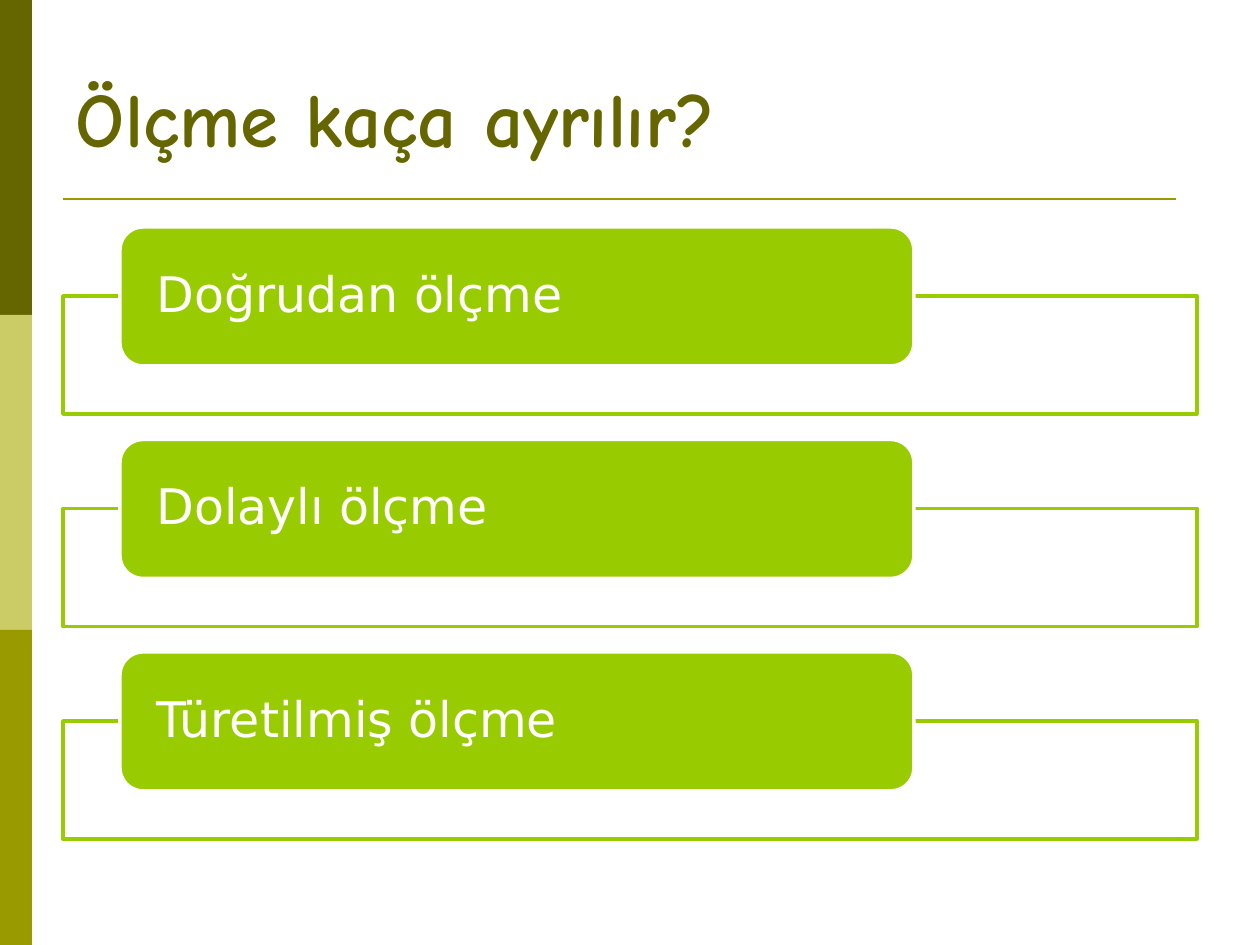
from pptx import Presentation
from pptx.dml.color import RGBColor
from pptx.enum.shapes import MSO_CONNECTOR, MSO_SHAPE as SHAPE
from pptx.enum.text import MSO_ANCHOR, PP_ALIGN
from pptx.oxml.ns import qn
from pptx.util import Pt
from lxml.etree import SubElement

TITLE = "Ölçme kaça ayrılır?"
KINDS = ["Doğrudan ölçme", "Dolaylı ölçme", "Türetilmiş ölçme"]
COLORS = {"dark": "666600", "pale": "CCCC66", "olive": "999900",
          "green": "99CC00", "white": "FFFFFF"}
BANDS = ["dark", "pale", "olive"]
TITLE_FONT = {"name": "Comic Neue", "size": Pt(44), "bold": True}
KIND_FONT = {"name": "DejaVu Sans", "size": Pt(28)}

PX = 914400 // 126
WIDE, HIGH = 1260, 945
LEFT, SPAN = 63, 1134
FRAME_TOP, FRAME_HIGH = 296, 118
PILL_TOP, PILL_HIGH = 227, 139
STEP = 212.5


def px(*sizes):
    return [round(size * PX) for size in sizes]


def rgb(name):
    return RGBColor.from_string(COLORS[name])


def add_box(slide, kind, box, fill, line=None):
    shape = slide.shapes.add_shape(kind, *px(*box))
    shape.shadow.inherit = False
    shape.fill.solid()
    shape.fill.fore_color.rgb = rgb(fill)
    if line:
        shape.line.color.rgb = rgb(line)
        shape.line.width = Pt(2)
    else:
        shape.line.fill.background()
    return shape


def write(shape, text, font, color, inset, spacing=1.0):
    frame = shape.text_frame
    frame.word_wrap = True
    frame.vertical_anchor = MSO_ANCHOR.MIDDLE
    frame.margin_left, frame.margin_right = px(inset, inset)
    frame.margin_top = frame.margin_bottom = 0
    para = frame.paragraphs[0]
    para.alignment = PP_ALIGN.LEFT
    para.line_spacing = spacing
    run = para.add_run()
    run.text = text
    for key, value in font.items():
        setattr(run.font, key, value)
    run.font.color.rgb = rgb(color)


def fade(shape, percent):
    """Set the opacity of a solid fill."""
    color = shape.fill._xPr.find(qn("a:solidFill"))[0]
    SubElement(color, qn("a:alpha")).set("val", str(percent * 1000))


def main():
    deck = Presentation()
    deck.slide_width, deck.slide_height = px(WIDE, HIGH)
    slide = deck.slides.add_slide(deck.slide_layouts[6])

    band = HIGH // len(BANDS)
    for i, color in enumerate(BANDS):
        add_box(slide, SHAPE.RECTANGLE, (0, i * band, 32, band), color)

    rule = slide.shapes.add_connector(
        MSO_CONNECTOR.STRAIGHT, *px(LEFT, 199, 1176, 199))
    rule.line.color.rgb = rgb("olive")
    rule.line.width = Pt(1.5)
    SubElement(rule._element.spPr, qn("a:effectLst"))

    title = slide.shapes.add_textbox(*px(LEFT, 38, SPAN, 158))
    write(title, TITLE, TITLE_FONT, "dark", 13)

    for i, kind in enumerate(KINDS):
        drop = i * STEP
        frame = add_box(slide, SHAPE.RECTANGLE,
                        (LEFT, FRAME_TOP + drop, SPAN, FRAME_HIGH),
                        "white", "green")
        fade(frame, 90)
        pill = add_box(slide, SHAPE.ROUNDED_RECTANGLE,
                       (120, PILL_TOP + drop, 794, PILL_HIGH),
                       "green", "white")
        write(pill, kind, KIND_FONT, "white", 30, 0.9)

    deck.save("out.pptx")


if __name__ == "__main__":
    main()
